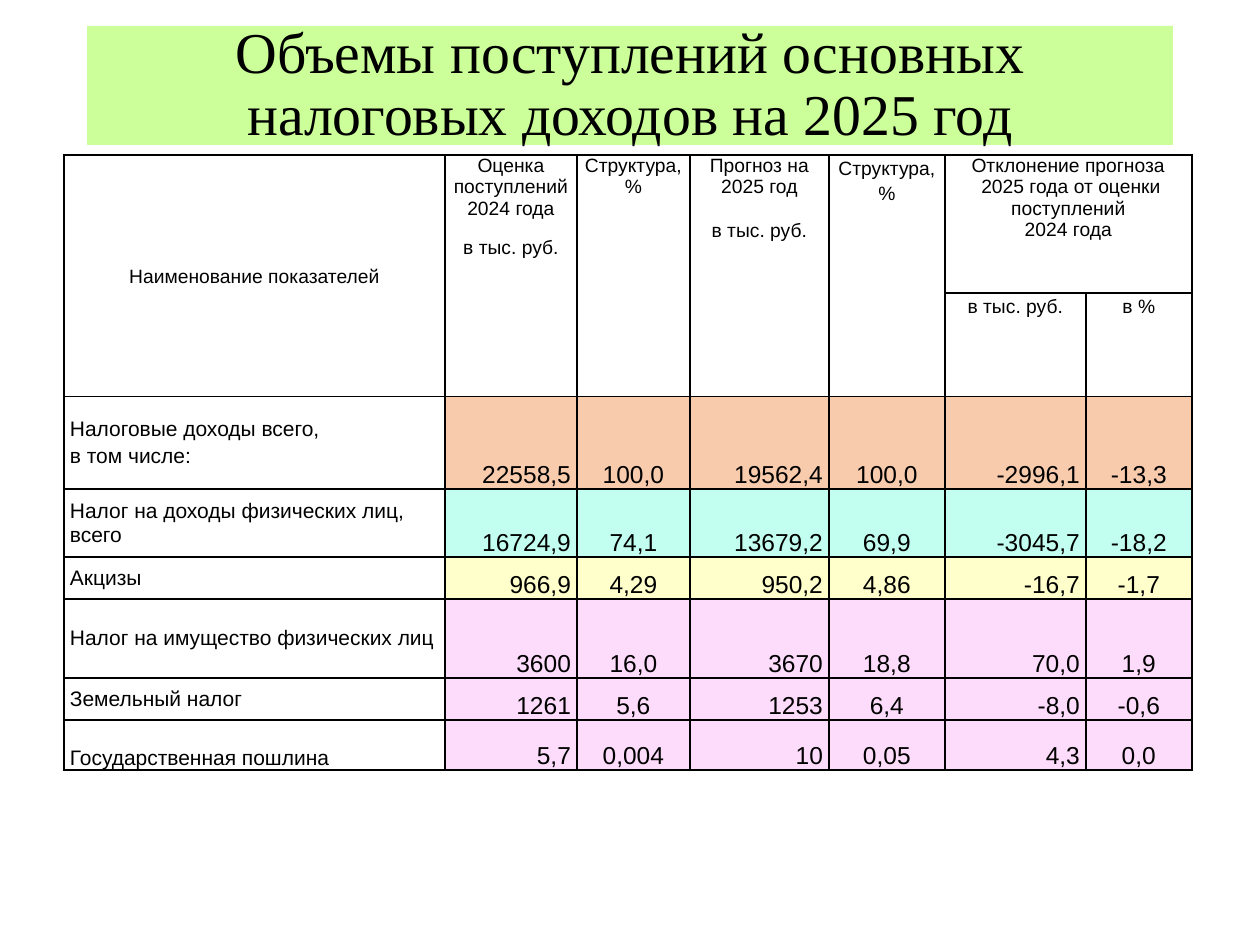
from dataclasses import dataclass

from lxml.etree import SubElement
from pptx import Presentation
from pptx.dml.color import RGBColor
from pptx.enum.text import MSO_ANCHOR, MSO_AUTO_SIZE, PP_ALIGN
from pptx.oxml.ns import qn
from pptx.util import Pt

SCALE = 914400 / 126  # EMU in one px


@dataclass(frozen=True)
class Theme:
    title_font: str = "Times New Roman"
    body_font: str = "Arial"
    title_size: int = 33
    header_size: int = 11
    label_size: int = 12
    value_size: int = 14
    text: str = "000000"
    border: str = "000000"
    title_fill: str = "CCFF99"
    total: str = "F8CBAD"
    income: str = "C2FFF0"
    excise: str = "FFFFCC"
    local: str = "FDDBFB"


theme = Theme()


def px(n):
    return round(n * SCALE)


def write(cell, lines, size, align, anchor):
    """Fill a cell with (text, line spacing, points after, points before) lines."""
    cell.vertical_anchor = anchor
    cell.margin_left = cell.margin_right = px(6)
    cell.margin_top = cell.margin_bottom = 0
    tf = cell.text_frame
    for i, (text, spacing, after, before) in enumerate(lines):
        p = tf.add_paragraph() if i else tf.paragraphs[0]
        p.text = text
        p.alignment = align
        p.line_spacing = spacing
        p.space_after, p.space_before = Pt(after), Pt(before)
        p.font.name, p.font.size = theme.body_font, Pt(size)
        p.font.color.rgb = RGBColor.from_string(theme.text)


prs = Presentation()
prs.slide_width, prs.slide_height = px(1260), px(945)
slide = prs.slides.add_slide(prs.slide_layouts[5])

# Title
title = slide.shapes.title
title.left, title.top, title.width, title.height = px(87), px(26), px(1086), px(119)
title.fill.solid()
title.fill.fore_color.rgb = RGBColor.from_string(theme.title_fill)
tf = title.text_frame
tf.text = "Объемы поступлений основных налоговых доходов на 2025 год"
tf.word_wrap = True
tf.auto_size = MSO_AUTO_SIZE.NONE
tf.vertical_anchor = MSO_ANCHOR.MIDDLE
p = tf.paragraphs[0]
p.alignment = PP_ALIGN.CENTER
p.line_spacing = 0.9
p.font.name, p.font.size = theme.title_font, Pt(theme.title_size)
p.font.color.rgb = RGBColor.from_string(theme.text)

# Table grid
col_widths = [381, 132, 113, 139, 116, 141, 106]
row_heights = [138, 36, 93, 68, 42, 79, 42, 50]
frame = slide.shapes.add_table(len(row_heights), len(col_widths), px(64), px(155),
                               px(sum(col_widths)), px(sum(row_heights)))
table = frame.table
table.first_row = table.horz_banding = False
for col, width in zip(table.columns, col_widths):
    col.width = px(width)
for row, height in zip(table.rows, row_heights):
    row.height = px(height)

for cell in table.iter_cells():
    tcPr = cell._tc.get_or_add_tcPr()
    for side in ("a:lnL", "a:lnR", "a:lnT", "a:lnB"):
        ln = SubElement(tcPr, qn(side), w=str(Pt(1)))
        fill = SubElement(ln, qn("a:solidFill"))
        SubElement(fill, qn("a:srgbClr"), val=theme.border)
    cell.fill.background()

# Header
for c in range(5):
    table.cell(0, c).merge(table.cell(1, c))
table.cell(0, 5).merge(table.cell(0, 6))

headers = {
    (0, 0): [("Наименование показателей", 1.15, 10, 0)],
    (0, 1): [("Оценка поступлений", 1.0, 0, 0), ("2024 года", 1.0, 10, 0),
             ("в тыс. руб.", 1.0, 10, 0)],
    (0, 2): [("Структура, %", 1.0, 10, 0)],
    (0, 3): [("Прогноз на", 1.0, 0, 0), ("2025 год", 1.0, 0, 0),
             ("в тыс. руб.", 1.0, 0, 12.5)],
    (0, 4): [("Структура, %", 1.15, 10, 0)],
    (0, 5): [("Отклонение прогноза", 1.0, 0, 0),
             (" 2025 года от оценки поступлений", 1.0, 0, 0), ("2024 года", 1.0, 0, 0)],
    (1, 5): [("в тыс. руб.", 1.15, 10, 0)],
    (1, 6): [("в %", 1.15, 10, 0)],
}
for (r, c), lines in headers.items():
    anchor = MSO_ANCHOR.TOP if c else MSO_ANCHOR.MIDDLE
    write(table.cell(r, c), lines, theme.header_size, PP_ALIGN.CENTER, anchor)

# Taxes: label lines, label anchor, fill, values
MIDDLE, BOTTOM = MSO_ANCHOR.MIDDLE, MSO_ANCHOR.BOTTOM
taxes = [
    ([("Налоговые доходы всего,", 1.0, 0, 0), ("в том числе:", 1.15, 10, 0)], MIDDLE,
     theme.total, ["22558,5", "100,0", "19562,4", "100,0", "-2996,1", "-13,3"]),
    ([("Налог на доходы физических лиц, всего", 1.0, 0, 0)], MIDDLE,
     theme.income, ["16724,9", "74,1", "13679,2", "69,9", "-3045,7", "-18,2"]),
    ([("Акцизы", 1.0, 0, 0)], MIDDLE,
     theme.excise, ["966,9", "4,29", "950,2", "4,86", "-16,7", "-1,7"]),
    ([("Налог на имущество физических лиц", 1.0, 0, 0)], MIDDLE,
     theme.local, ["3600", "16,0", "3670", "18,8", "70,0", "1,9"]),
    ([("Земельный налог", 1.0, 0, 0)], MIDDLE,
     theme.local, ["1261", "5,6", "1253", "6,4", "-8,0", "-0,6"]),
    ([("Государственная пошлина", 1.0, 0, 0)], BOTTOM,
     theme.local, ["5,7", "0,004", "10", "0,05", "4,3", "0,0"]),
]
for r, (label, anchor, color, values) in enumerate(taxes, start=2):
    write(table.cell(r, 0), label, theme.label_size, PP_ALIGN.LEFT, anchor)
    for c, value in enumerate(values, start=1):
        cell = table.cell(r, c)
        align = PP_ALIGN.RIGHT if c % 2 else PP_ALIGN.CENTER
        write(cell, [(value, 1.15, 10, 0)], theme.value_size, align, BOTTOM)
        cell.fill.solid()
        cell.fill.fore_color.rgb = RGBColor.from_string(color)

prs.save("out.pptx")
